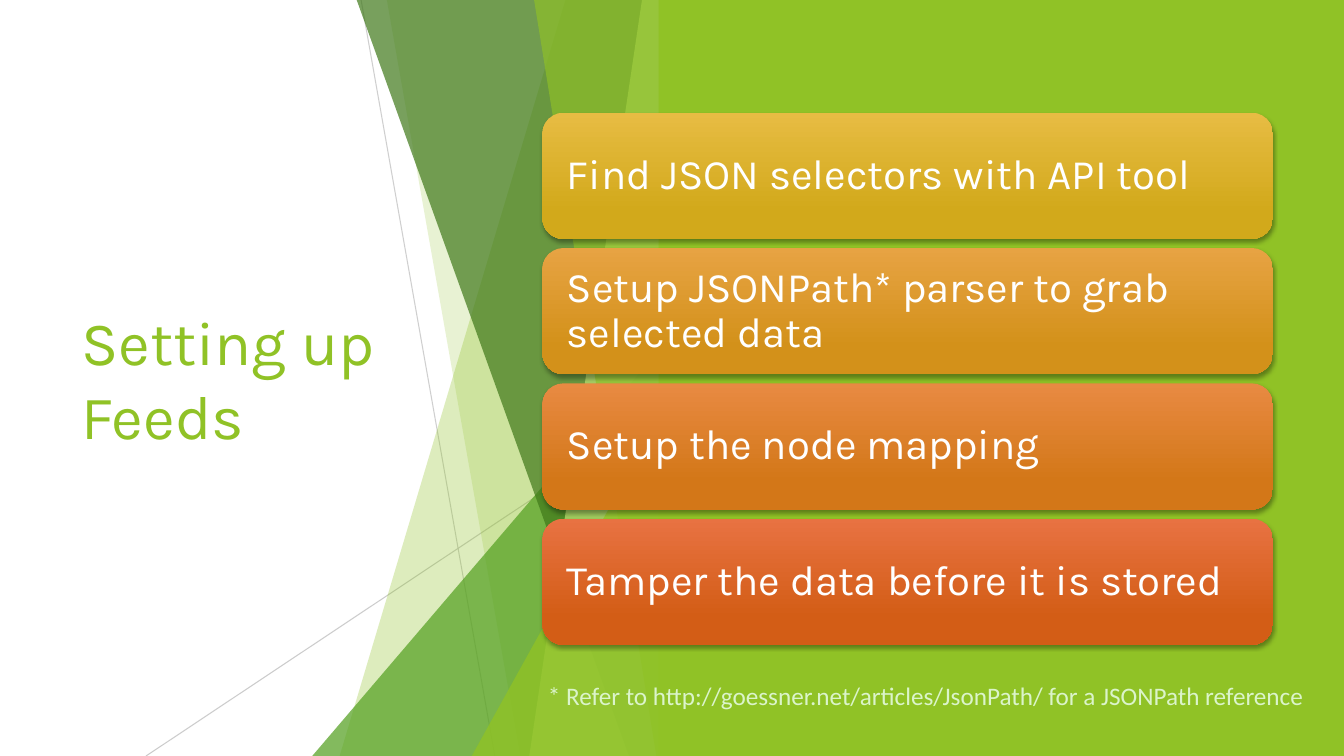
from lxml import etree
from pptx import Presentation
from pptx.dml.color import RGBColor
from pptx.enum.shapes import MSO_CONNECTOR, MSO_SHAPE
from pptx.enum.text import MSO_ANCHOR
from pptx.oxml.ns import qn
from pptx.util import Cm, Pt

STRAIGHT = MSO_CONNECTOR.STRAIGHT
TRIANGLE = MSO_SHAPE.ISOSCELES_TRIANGLE
RECTANGLE = MSO_SHAPE.RECTANGLE
ROUNDED = MSO_SHAPE.ROUNDED_RECTANGLE
MIDDLE, TOP = MSO_ANCHOR.MIDDLE, MSO_ANCHOR.TOP

WHITE = RGBColor(0xFF, 0xFF, 0xFF)
GRAY = RGBColor(0xBF, 0xBF, 0xBF)
LIME = RGBColor(0x90, 0xC2, 0x26)
LEAF = RGBColor(0x54, 0xA0, 0x21)
FOREST = RGBColor(0x3F, 0x78, 0x19)
PALE_LIME = RGBColor(0xC0, 0xE4, 0x74)
MINT = RGBColor(0xDB, 0xF4, 0xCA)

# Content
TITLE = "Setting up Feeds"
FOOTNOTE = "* Refer to http://goessner.net/articles/JsonPath/ for a JSONPath reference"
STEPS = [  # text, upper colour, lower colour
    ("Find JSON selectors with API tool",
     RGBColor(0xE7, 0xBC, 0x43), RGBColor(0xD2, 0xA9, 0x1B)),
    ("Setup JSONPath* parser to grab selected data",
     RGBColor(0xE7, 0xA3, 0x43), RGBColor(0xD3, 0x91, 0x1A)),
    ("Setup the node mapping",
     RGBColor(0xE8, 0x8A, 0x42), RGBColor(0xD3, 0x77, 0x18)),
    ("Tamper the data before it is stored",
     RGBColor(0xE8, 0x72, 0x42), RGBColor(0xD3, 0x5D, 0x16)),
]

# Decoration, in cm
SLIDE_W, SLIDE_H = 33.87, 19.05
SHARD_RIGHT = 16.92
RAYS = [  # x1, y1, x2, y2, opacity
    (9.1, 0, 12.47, SLIDE_H, 75),
    (SHARD_RIGHT, 10.24, 3.68, SLIDE_H, 80),
]
SHARDS = [  # top x, top y, bottom x, colour, opacity
    (14.25, 0, 8.56, LIME, 30),
    (9.75, 0, 13.11, LIME, 20),
    (SHARD_RIGHT, 8.46, 7.87, LEAF, 72),
    (8.99, 0, 15.85, FOREST, 70),
    (16.18, 0, 13.34, PALE_LIME, 70),
    (13.46, 0, 16.54, LIME, 65),
    (SHARD_RIGHT, 9.98, 11.89, LIME, 80),
]
PANEL_LEFT = 16.6

# Step cards, in cm
CARD_LEFT, CARD_TOP, CARD_W, CARD_H = 13.67, 2.84, 18.41, 3.18
CARD_PITCH = 3.41


def set_opacity(shape, percent):
    for color in shape._element.spPr.iter(qn("a:srgbClr")):
        etree.SubElement(color, qn("a:alpha"), val=str(percent * 1000))


def paint(shape, color):
    shape.fill.solid()
    shape.fill.fore_color.rgb = color
    shape.line.fill.background()
    shape.shadow.inherit = False


def write(frame, text, font, size, color, anchor):
    frame.text = text
    frame.word_wrap = True
    frame.vertical_anchor = anchor
    style = frame.paragraphs[0].runs[0].font
    style.name, style.size, style.color.rgb = font, Pt(size), color


def add_ray(shapes, x1, y1, x2, y2, opacity):
    ray = shapes.add_connector(STRAIGHT, Cm(x1), Cm(y1), Cm(x2), Cm(y2))
    ray.line.color.rgb = GRAY
    ray.line.width = Pt(0.75)
    set_opacity(ray, opacity)
    etree.SubElement(ray._element.spPr, qn("a:effectLst"))


def add_shard(shapes, top_x, top_y, bottom_x, color, opacity):
    if top_x == SHARD_RIGHT:
        shard = shapes.add_shape(TRIANGLE, Cm(bottom_x), Cm(top_y),
                                 Cm(SHARD_RIGHT - bottom_x), Cm(SLIDE_H - top_y))
        shard.adjustments[0] = 1
    else:
        outline = shapes.build_freeform(Cm(top_x), Cm(top_y))
        corners = [(SHARD_RIGHT, top_y), (SHARD_RIGHT, SLIDE_H), (bottom_x, SLIDE_H)]
        outline.add_line_segments([(Cm(x), Cm(y)) for x, y in corners], close=True)
        shard = outline.convert_to_shape()
    paint(shard, color)
    set_opacity(shard, opacity)


def add_card(shapes, index, text, upper, lower):
    card = shapes.add_shape(ROUNDED, Cm(CARD_LEFT), Cm(CARD_TOP + index * CARD_PITCH),
                            Cm(CARD_W), Cm(CARD_H))
    paint(card, upper)
    card.fill.gradient()
    card.fill.gradient_angle = 270
    for stop, position, color in zip(card.fill.gradient_stops, (0, 0.78), (upper, lower)):
        stop.position = position
        stop.color.rgb = color
    # Soft shadow below the card
    effects = card._element.spPr.find(qn("a:effectLst"))
    shadow = etree.SubElement(effects, qn("a:outerShdw"), blurRad=str(Pt(3)),
                              dist=str(Pt(2)), dir="5400000", rotWithShape="0")
    black = etree.SubElement(shadow, qn("a:srgbClr"), val="000000")
    etree.SubElement(black, qn("a:alpha"), val="35000")

    frame = card.text_frame
    write(frame, text, "Karla", 30, WHITE, MIDDLE)
    frame.margin_left = frame.margin_right = Cm(0.46)
    frame.paragraphs[0].line_spacing = 0.9
    frame.paragraphs[0].alignment = 1


def add_label(shapes, left, top, width, height, *style):
    box = shapes.add_textbox(Cm(left), Cm(top), Cm(width), Cm(height))
    write(box.text_frame, *style)


def main():
    deck = Presentation()
    deck.slide_width, deck.slide_height = Cm(SLIDE_W), Cm(SLIDE_H)
    shapes = deck.slides.add_slide(deck.slide_layouts[6]).shapes

    # Background
    for ray in RAYS:
        add_ray(shapes, *ray)
    for shard in SHARDS:
        add_shard(shapes, *shard)
    panel = shapes.add_shape(RECTANGLE, Cm(PANEL_LEFT), 0,
                             Cm(SLIDE_W - PANEL_LEFT), Cm(SLIDE_H))
    paint(panel, LIME)

    # Title, steps and footnote
    add_label(shapes, 1.8, 3.84, 9.86, 11.38, TITLE, "Karla", 44, LIME, MIDDLE)
    for index, step in enumerate(STEPS):
        add_card(shapes, index, *step)
    add_label(shapes, 13.56, 17.02, 20, 1.02, FOOTNOTE, "Calibri", 18, MINT, TOP)

    deck.save("out.pptx")


if __name__ == "__main__":
    main()
